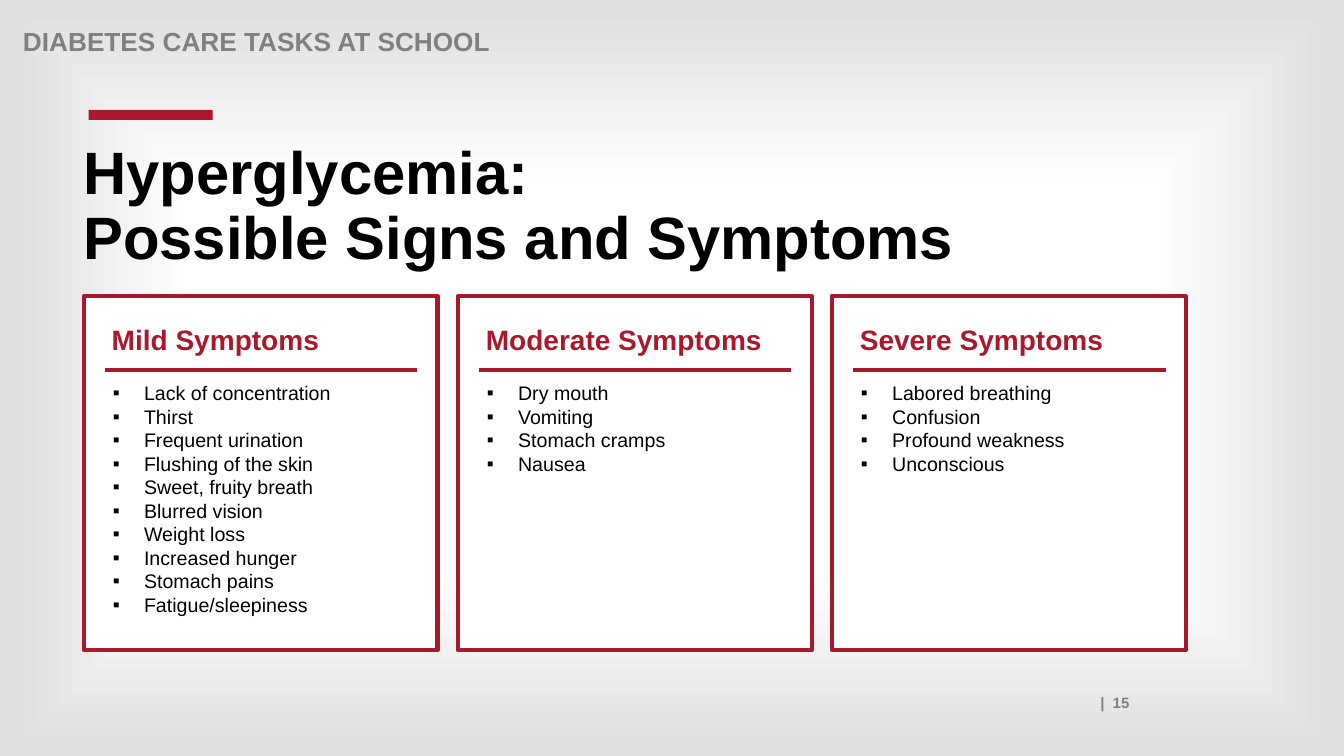
from lxml.etree import SubElement
from pptx import Presentation
from pptx.dml.color import RGBColor
from pptx.enum.shapes import MSO_CONNECTOR, MSO_SHAPE
from pptx.enum.text import MSO_ANCHOR, PP_ALIGN
from pptx.oxml import parse_xml
from pptx.oxml.ns import nsdecls, qn
from pptx.util import Inches, Pt

RED = RGBColor(0xAA, 0x18, 0x2C)
GRAY = RGBColor(0x80, 0x80, 0x80)
BLACK = RGBColor(0, 0, 0)
WHITE = RGBColor(0xFF, 0xFF, 0xFF)
BACKGROUND_STOPS = [(12, "FFFFFF"), (50, "FFFFFF"), (98, "E0E0E0")]

CARD_LEFT, CARD_TOP, CARD_SIZE, CARD_PITCH = 0.83, 2.94, 3.51, 3.71
BULLET_INDENT = 0.31
CARDS = {
    "Mild Symptoms": [
        "Lack of concentration", "Thirst", "Frequent urination",
        "Flushing of the skin", "Sweet, fruity breath", "Blurred vision",
        "Weight loss", "Increased hunger", "Stomach pains",
        "Fatigue/sleepiness",
    ],
    "Moderate Symptoms": ["Dry mouth", "Vomiting", "Stomach cramps", "Nausea"],
    "Severe Symptoms": [
        "Labored breathing", "Confusion", "Profound weakness", "Unconscious",
    ],
}


def set_background(slide):
    stops = "".join(
        f'<a:gs pos="{position * 1000}"><a:srgbClr val="{color}"/></a:gs>'
        for position, color in BACKGROUND_STOPS
    )
    background = parse_xml(
        f'<p:bg {nsdecls("p", "a")}><p:bgPr><a:gradFill rotWithShape="1">'
        f'<a:gsLst>{stops}</a:gsLst><a:path path="shape">'
        '<a:fillToRect l="50000" t="50000" r="50000" b="50000"/></a:path>'
        "</a:gradFill><a:effectLst/></p:bgPr></p:bg>"
    )
    slide.element.cSld.insert(0, background)


def add_bullet(paragraph):
    properties = paragraph._p.get_or_add_pPr()
    properties.set("marL", str(Inches(BULLET_INDENT)))
    properties.set("indent", str(-Inches(BULLET_INDENT)))
    SubElement(properties, qn("a:buFont"), typeface="Arial")
    SubElement(properties, qn("a:buChar"), char="▪")


def add_text(slide, lines, left, top, width, height, *, size, color=BLACK,
             bold=False, spacing=None, align=PP_ALIGN.LEFT, bullets=False):
    box = slide.shapes.add_textbox(
        Inches(left), Inches(top), Inches(width), Inches(height))
    frame = box.text_frame
    frame.word_wrap = True
    frame.vertical_anchor = MSO_ANCHOR.TOP
    for index, line in enumerate(lines):
        paragraph = frame.add_paragraph() if index else frame.paragraphs[0]
        if bullets:
            add_bullet(paragraph)
        paragraph.text = line
        paragraph.alignment = align
        if spacing:
            paragraph.line_spacing = spacing
        for run in paragraph.runs:
            run.font.name = "Arial"
            run.font.size = Pt(size)
            run.font.bold = bold
            run.font.color.rgb = color


def add_rectangle(slide, left, top, width, height, fill, line=None):
    shape = slide.shapes.add_shape(
        MSO_SHAPE.RECTANGLE,
        Inches(left), Inches(top), Inches(width), Inches(height))
    shape.shadow.inherit = False
    shape.fill.solid()
    shape.fill.fore_color.rgb = fill
    if line is None:
        shape.line.fill.background()
    else:
        shape.line.color.rgb = line
        shape.line.width = Pt(3)


def add_rule(slide, left, top, width):
    rule = slide.shapes.add_connector(
        MSO_CONNECTOR.STRAIGHT,
        Inches(left), Inches(top), Inches(left + width), Inches(top))
    rule.line.color.rgb = RED
    rule.line.width = Pt(3)
    SubElement(rule._element.spPr, qn("a:effectLst"))


def add_card(slide, column, heading, symptoms):
    left = CARD_LEFT + column * CARD_PITCH
    add_rectangle(slide, left, CARD_TOP, CARD_SIZE, CARD_SIZE, WHITE, RED)
    add_text(slide, [heading], left + 0.18, CARD_TOP + 0.25, 3.22, 0.42,
             size=20, color=RED, bold=True, spacing=0.9)
    add_rule(slide, left + 0.21, CARD_TOP + 0.73, 3.1)
    add_text(slide, symptoms, left + 0.19, CARD_TOP + 0.79, 3.22, 0.72,
             size=14, bullets=True)


def main():
    presentation = Presentation()
    presentation.slide_width = Inches(13.33)
    presentation.slide_height = Inches(7.5)
    slide = presentation.slides.add_slide(presentation.slide_layouts[6])
    set_background(slide)

    add_text(slide, ["|\u00a0 15".replace("\u00a0", " ")], 1.21, 6.83, 10.09, 0.28,
             size=10.7, color=GRAY, bold=True, align=PP_ALIGN.RIGHT)
    add_text(slide, ["DIABETES CARE TASKS AT SCHOOL"], 0.13, 0.24, 11, 0.28,
             size=18.7, color=GRAY, bold=True, spacing=0.9)
    add_rectangle(slide, 0.88, 1.09, 1.23, 0.1, RED)
    add_text(slide, ["Hyperglycemia: \vPossible Signs and Symptoms"],
             0.73, 1.37, 11.03, 1.3, size=42.7, bold=True, spacing=0.9)
    for column, (heading, symptoms) in enumerate(CARDS.items()):
        add_card(slide, column, heading, symptoms)

    presentation.save("out.pptx")


if __name__ == "__main__":
    main()
